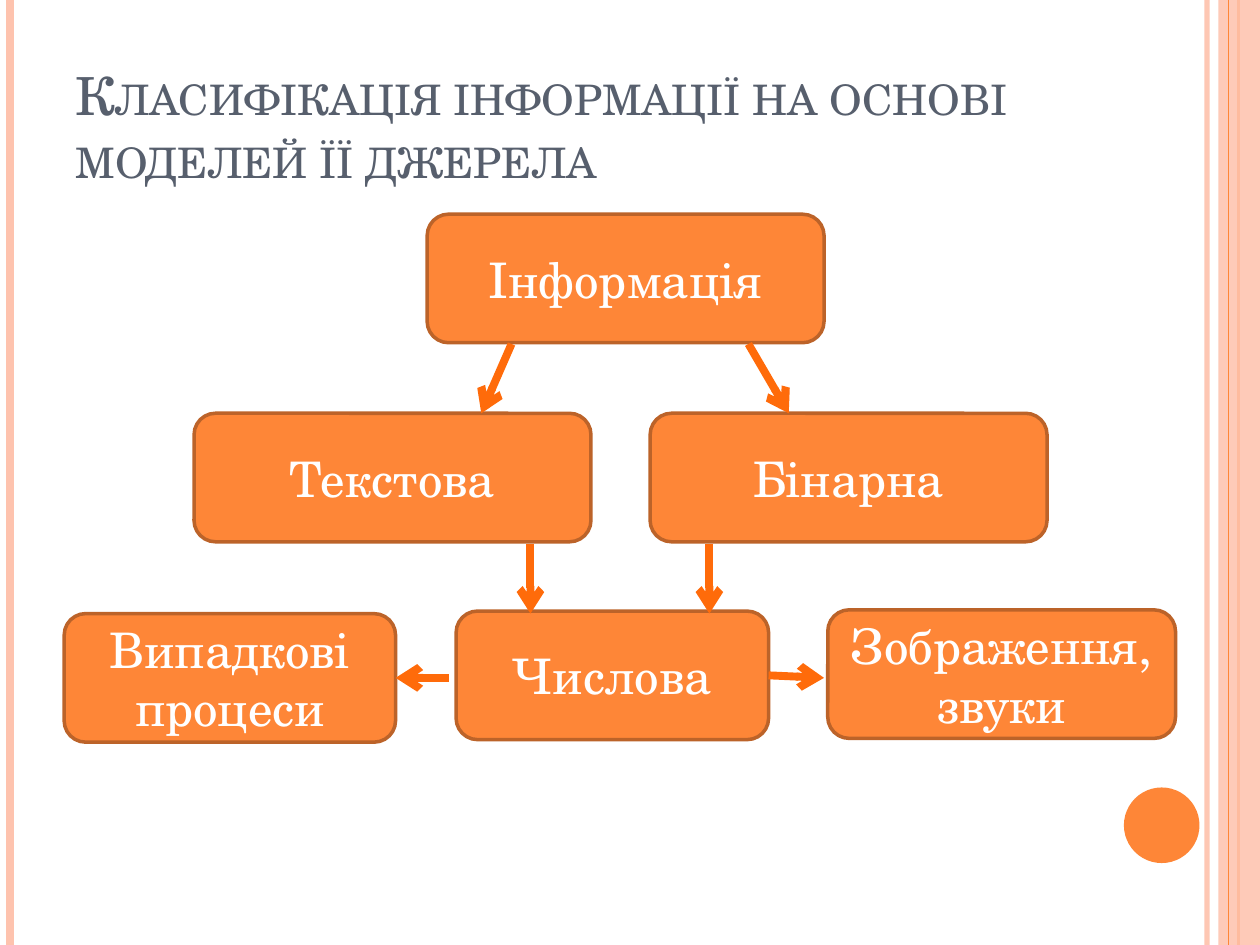
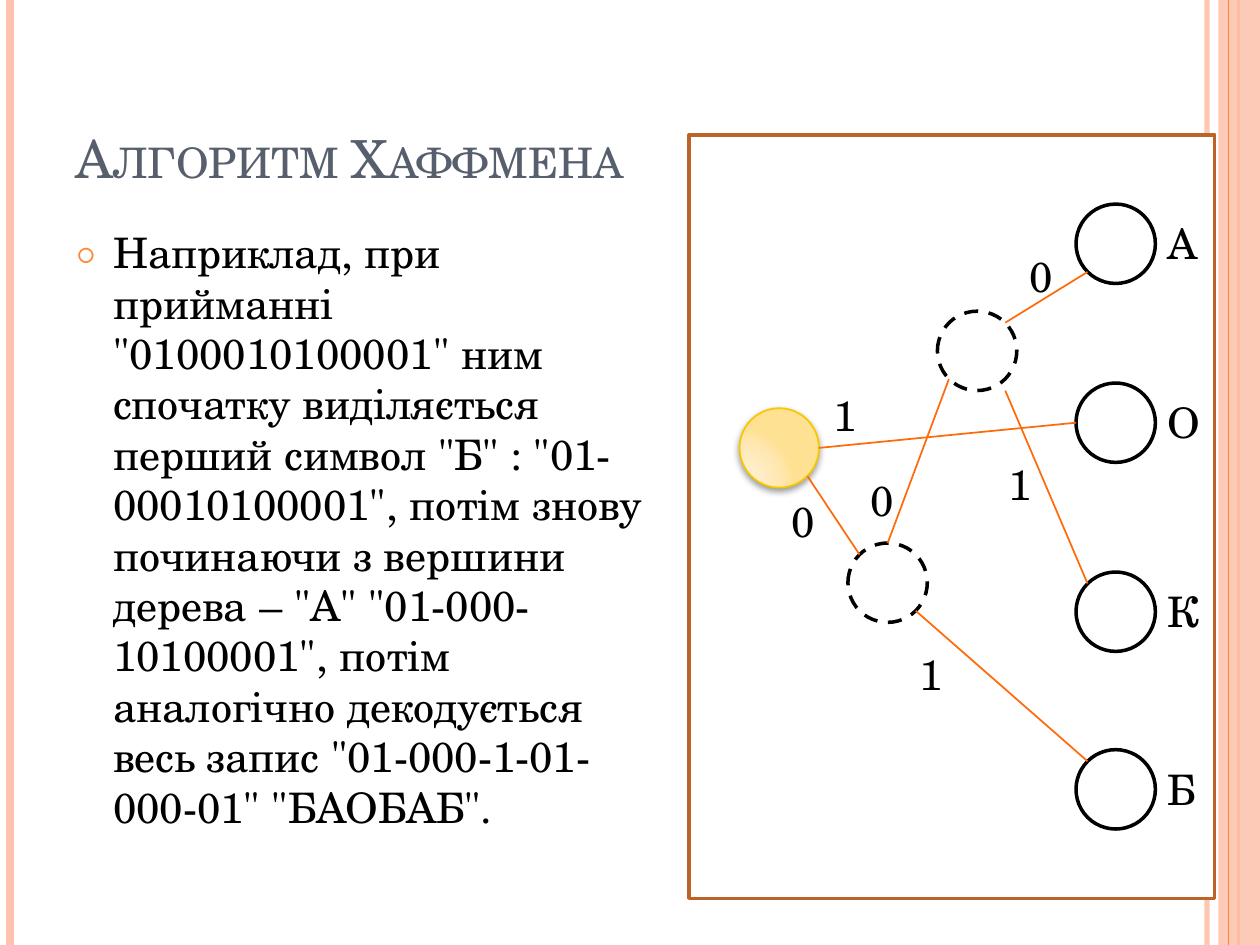
from pptx import Presentation
from pptx.dml.color import RGBColor
from pptx.enum.dml import MSO_LINE
from pptx.enum.shapes import MSO_CONNECTOR, MSO_SHAPE as SHAPE
from pptx.enum.text import MSO_ANCHOR as ANCHOR, MSO_AUTO_SIZE, PP_ALIGN as ALIGN
from pptx.oxml import parse_xml
from pptx.oxml.ns import nsdecls, qn
from pptx.util import Inches, Pt
from lxml.etree import SubElement

FONT = "TeX Gyre Schola"
ORANGE, ARROW, BORDER, PEACH = "FE8637", "FF6B0A", "BC6329", "FEC3AE"
SLATE, BLACK, WHITE, GOLD = "575F6D", "000000", "FFFFFF", "F8C700"
WIDTH, HEIGHT = 10, 7.5

# Slide 1: classification boxes (left, top, width, text) and arrows between points
CLASSES_TITLE = "Класифікація інформації на основі моделей її джерела"
BOX_HEIGHT = 1.02
BOXES = [
    (3.39, 1.7, 3.15, "Інформація"),
    (1.54, 3.28, 3.15, "Текстова"),
    (5.16, 3.28, 3.15, "Бінарна"),
    (3.62, 4.85, 2.48, "Числова"),
    (6.57, 4.84, 2.76, "Зображення, звуки"),
    (0.51, 4.87, 2.63, "Випадкові процеси"),
]
ARROWS = [
    ((4.06, 2.73), (3.82, 3.28)),
    ((5.94, 2.73), (6.26, 3.28)),
    ((4.21, 4.32), (4.21, 4.87)),
    ((5.63, 4.32), (5.63, 4.87)),
]

# Slide 2: Huffman tree; nodes by left and top, edge ends in radii from a node's centre
HUFFMAN_TITLE = "Алгоритм Хаффмена"
HUFFMAN_TEXT = (
    'Наприклад, при прийманні "0100010100001" ним спочатку виділяється перший '
    'символ "Б" : "01-00010100001", потім знову починаючи з вершини дерева – '
    '"А" "01-000-10100001", потім аналогічно декодується весь запис '
    '"01-000-1-01-000-01" "БАОБАБ".'
)
NODE_SIZE, LABEL_SIZE = 0.63, (0.47, 0.5)
LEAF_LEFT = 8.54
LEAVES = {"А": 1.62, "О": 3.04, "К": 4.54, "Б": 5.95}
BRANCHES = {"upper": (7.44, 2.47), "lower": (6.73, 4.31)}
ROOT = (5.87, 3.24)
DIAGONAL = 0.71
TOP, LEFT, RIGHT = (0, -1), (-1, 0), (1, 0)
TOP_LEFT, TOP_RIGHT = (-DIAGONAL, -DIAGONAL), (DIAGONAL, -DIAGONAL)
BOTTOM_LEFT, BOTTOM_RIGHT = (-DIAGONAL, DIAGONAL), (DIAGONAL, DIAGONAL)
EDGES = [  # start node, side, end node, side, bit, place of the bit
    ("А", BOTTOM_LEFT, "upper", TOP_RIGHT, "0", (8.07, 1.94)),
    ("К", TOP_LEFT, "upper", (DIAGONAL, 1), "1", (7.91, 3.59)),
    ("upper", BOTTOM_LEFT, "lower", TOP, "0", (6.81, 3.72)),
    ("lower", BOTTOM_RIGHT, "Б", TOP_LEFT, "1", (7.2, 5.1)),
    ("О", LEFT, "root", RIGHT, "1", (6.52, 3.04)),
    ("lower", TOP_LEFT, "root", BOTTOM_RIGHT, "0", (6.18, 3.88)),
]
ROOT_STOPS = [(0, "FFF0D1"), (30, "FFEFCC"), (75, "FFE7B1"), (100, "FFE193")]


def rgb(value):
    return RGBColor.from_string(value)


def set_alpha(parent, percent):
    """Make the first colour found under parent partly transparent."""
    color = next(parent.iter(qn("a:srgbClr")))
    SubElement(color, qn("a:alpha"), val=str(percent * 1000))


def write(shape, text, size=24, color=BLACK, align=ALIGN.LEFT, anchor=ANCHOR.TOP,
          small_caps=False, bullet=False):
    frame = shape.text_frame
    frame.word_wrap = True
    frame.vertical_anchor = anchor
    paragraph = frame.paragraphs[0]
    paragraph.alignment = align
    run = paragraph.add_run()
    run.text = text
    run.font.size, run.font.name = Pt(size), FONT
    run.font.color.rgb = rgb(color)
    if small_caps:
        run.font._element.set("cap", "small")
    if bullet:
        add_bullet(paragraph)


def add_bullet(paragraph):
    paragraph.space_before = Pt(6)
    properties = paragraph._p.get_or_add_pPr()
    properties.set("marL", str(Inches(0.3)))
    properties.set("indent", str(Inches(-0.3)))
    color = SubElement(properties, qn("a:buClr"))
    SubElement(color, qn("a:srgbClr"), val=ORANGE)
    SubElement(properties, qn("a:buSzPct"), val="70000")
    SubElement(properties, qn("a:buFont"), typeface=FONT)
    SubElement(properties, qn("a:buChar"), char="○")


def add_text(slide, left, top, width, height, text, grow=False, **format_options):
    box = slide.shapes.add_textbox(*map(Inches, (left, top, width, height)))
    write(box, text, **format_options)
    box.text_frame.auto_size = (
        MSO_AUTO_SIZE.SHAPE_TO_FIT_TEXT if grow else MSO_AUTO_SIZE.NONE)
    return box


def add_shape(slide, kind, left, top, width, height, fill, line=None, weight=2,
              dashed=False):
    shape = slide.shapes.add_shape(kind, *map(Inches, (left, top, width, height)))
    shape.shadow.inherit = False
    shape.fill.solid()
    shape.fill.fore_color.rgb = rgb(fill)
    if line:
        shape.line.color.rgb = rgb(line)
        shape.line.width = Pt(weight)
        if dashed:
            shape.line.dash_style = MSO_LINE.DASH
    else:
        shape.line.fill.background()
    return shape


def add_line(slide, start, end, color, weight, arrow=False):
    connector = slide.shapes.add_connector(
        MSO_CONNECTOR.STRAIGHT, *map(Inches, (*start, *end)))
    connector.line.color.rgb = rgb(color)
    connector.line.width = Pt(weight)
    properties = connector.element.spPr
    if arrow:
        SubElement(properties.find(qn("a:ln")), qn("a:tailEnd"), type="arrow")
    SubElement(properties, qn("a:effectLst"))
    return connector


def add_base_slide(presentation, title):
    """Add a slide with the side bands and the title."""
    slide = presentation.slides.add_slide(presentation.slide_layouts[6])

    def add_stripe(x, color, weight):
        return add_line(slide, (x, 0), (x, HEIGHT), color, weight)

    set_alpha(add_stripe(9.58, PEACH, 3).element.spPr, 93)
    add_stripe(0.08, PEACH, 4.5)
    add_stripe(9.83, ORANGE, 1.5)
    band = add_shape(slide, SHAPE.RECTANGLE, 9.67, 0, WIDTH - 9.67, HEIGHT, PEACH)
    set_alpha(band.element.spPr, 87)
    add_stripe(9.75, ORANGE, 0.75)
    add_text(slide, 0.5, 0.3, 8.17, 1.25, title, size=30, color=SLATE,
             anchor=ANCHOR.BOTTOM, small_caps=True)
    return slide


def style_root(shape):
    """Give the root node its glow-like gradient and soft shadow."""
    stops = "".join(
        f'<a:gs pos="{position * 1000}"><a:srgbClr val="{color}"/></a:gs>'
        for position, color in ROOT_STOPS)
    gradient = parse_xml(
        f'<a:gradFill {nsdecls("a")} rotWithShape="1"><a:gsLst>{stops}</a:gsLst>'
        '<a:path path="circle">'
        '<a:fillToRect l="5000" t="100000" r="120000" b="10000"/>'
        '</a:path></a:gradFill>')
    properties = shape.element.spPr
    properties.replace(properties.find(qn("a:solidFill")), gradient)
    shadow = SubElement(
        properties.find(qn("a:effectLst")), qn("a:outerShdw"), blurRad=str(Pt(4)),
        dist=str(Pt(2)), dir=str(90 * 60000), rotWithShape="0")
    SubElement(shadow, qn("a:srgbClr"), val=BLACK)
    set_alpha(shadow, 40)


def build_classes(presentation):
    slide = add_base_slide(presentation, CLASSES_TITLE)
    add_shape(slide, SHAPE.OVAL, 8.92, 6.25, 0.6, 0.6, ORANGE)
    boxes = {}
    for left, top, width, text in BOXES:
        box = add_shape(slide, SHAPE.ROUNDED_RECTANGLE, left, top, width, BOX_HEIGHT,
                        ORANGE, BORDER)
        write(box, text, size=28, color=WHITE, align=ALIGN.CENTER,
              anchor=ANCHOR.MIDDLE)
        boxes[text] = box
    for start, end in ARROWS:
        add_line(slide, start, end, ARROW, 4.5, arrow=True)
    to_media = add_line(slide, (6.1, 5.38), (6.54, 5.38), ARROW, 4.5, arrow=True)
    to_media.begin_connect(boxes["Числова"], 3)
    to_random = add_line(slide, (3.56, 5.38), (3.14, 5.38), ARROW, 4.5, arrow=True)
    to_random.end_connect(boxes["Випадкові процеси"], 3)


def build_huffman(presentation):
    slide = add_base_slide(presentation, HUFFMAN_TITLE)
    add_text(slide, 0.5, 1.75, 4.74, 5.33, HUFFMAN_TEXT, bullet=True)
    add_shape(slide, SHAPE.RECTANGLE, 5.47, 1.07, 4.17, 6.06, WHITE, BORDER)

    def add_node(place, fill=WHITE, line=BLACK, **options):
        return add_shape(slide, SHAPE.OVAL, *place, NODE_SIZE, NODE_SIZE, fill, line,
                         **options)

    nodes = {"root": ROOT, **BRANCHES}
    for letter, top in LEAVES.items():
        nodes[letter] = (LEAF_LEFT, top)
        add_node(nodes[letter])
        add_text(slide, LEAF_LEFT + NODE_SIZE, top + 0.06, *LABEL_SIZE, letter,
                 grow=True)
    for place in BRANCHES.values():
        add_node(place, dashed=True)
    style_root(add_node(ROOT, ROOT_STOPS[0][1], GOLD, weight=1))

    def edge_point(name, side):
        radius = NODE_SIZE / 2
        return [corner + radius * (1 + step) for corner, step in zip(nodes[name], side)]

    for start, start_side, end, end_side, bit, bit_place in EDGES:
        add_line(slide, edge_point(start, start_side), edge_point(end, end_side),
                 ARROW, 1)
        add_text(slide, *bit_place, *LABEL_SIZE, bit, grow=True)


def main():
    presentation = Presentation()
    presentation.slide_width, presentation.slide_height = Inches(WIDTH), Inches(HEIGHT)
    build_classes(presentation)
    build_huffman(presentation)
    presentation.save("out.pptx")


if __name__ == "__main__":
    main()
